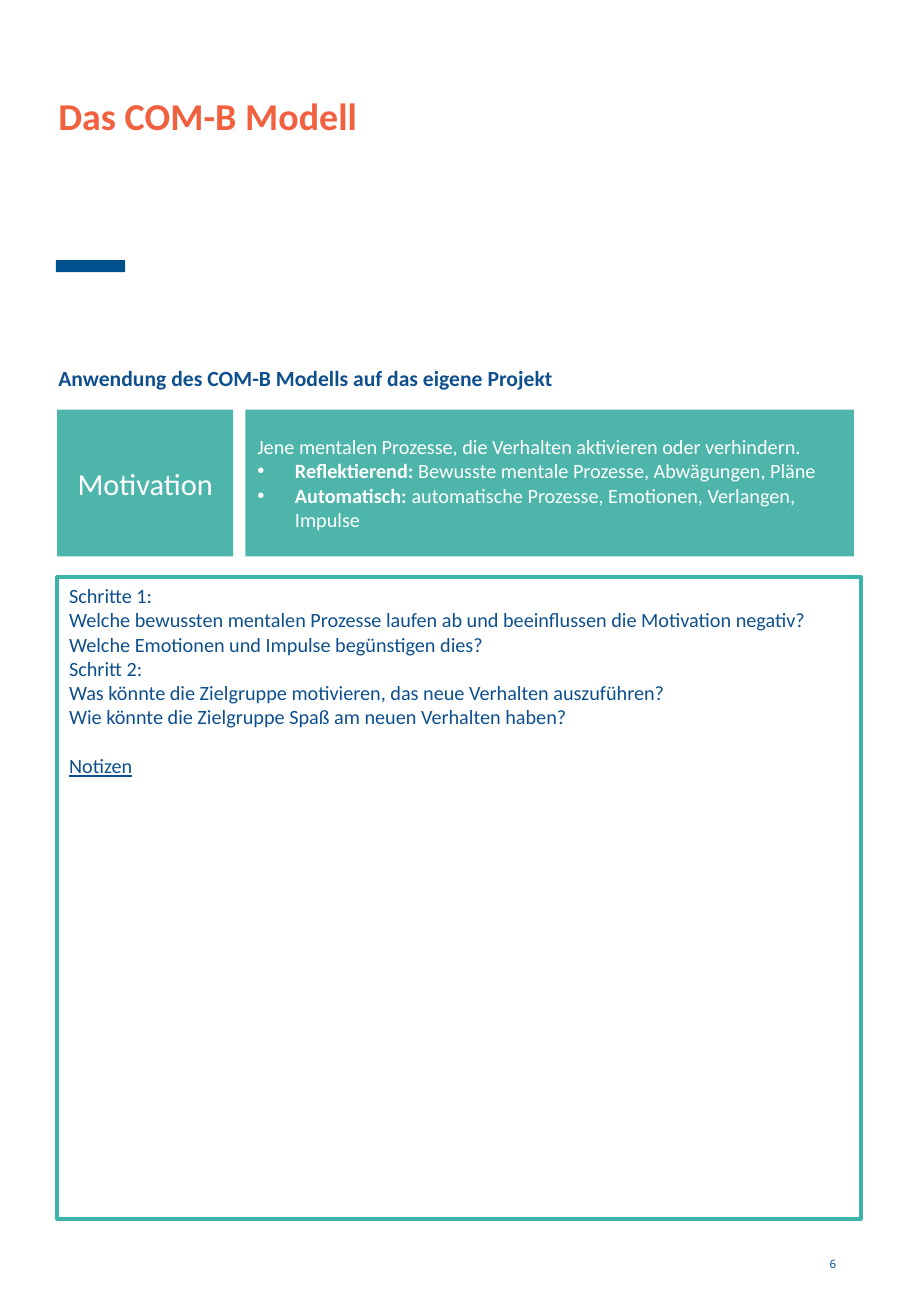
from pptx import Presentation
from pptx.dml.color import RGBColor
from pptx.enum.shapes import MSO_SHAPE
from pptx.enum.text import MSO_ANCHOR, MSO_AUTO_SIZE, PP_ALIGN
from pptx.oxml.ns import qn
from pptx.util import Inches, Pt

RECT = MSO_SHAPE.RECTANGLE
TOP, MIDDLE = MSO_ANCHOR.TOP, MSO_ANCHOR.MIDDLE
LEFT, CENTER = PP_ALIGN.LEFT, PP_ALIGN.CENTER
NO_FIT = MSO_AUTO_SIZE.NONE
DEEP_BLUE, TEXT_BLUE, ORANGE = "01508E", "0E508E", "F1613F"
TEAL, TEAL_LINE, WHITE = "4EB5AA", "3DB4A9", "FFFFFF"


def rgb(color):
    return RGBColor.from_string(color)


def write(shape, paragraphs, size, color, anchor=TOP, align=LEFT, font="Calibri", bold=None):
    """Fill a shape with paragraphs, each a list of (text, bold) runs or a plain string."""
    frame = shape.text_frame
    frame.word_wrap = True
    frame.auto_size = NO_FIT
    frame.vertical_anchor = anchor
    for index, content in enumerate(paragraphs):
        paragraph = frame.paragraphs[0] if index == 0 else frame.add_paragraph()
        paragraph.alignment = align
        paragraph.font.name = font
        paragraph.font.size = Pt(size)
        paragraph.font.color.rgb = rgb(color)
        paragraph.font.bold = bold
        if isinstance(content, str):
            paragraph.add_run().text = content
        else:
            for text, run_bold in content:
                run = paragraph.add_run()
                run.text = text
                run.font.bold = run_bold
    return frame


prs = Presentation()
prs.slide_width, prs.slide_height = Inches(7.5), Inches(10.83)
slide = prs.slides.add_slide(prs.slide_layouts[1])
title, subtitle = slide.placeholders

# Title
title.left, title.top, title.width, title.height = map(Inches, (0.38, 0.66, 6.75, 0.88))
title_frame = write(title, ["Das COM-B Modell"], 22.5, ORANGE, bold=True)
title_frame.margin_top = Inches(0.1)

# Section heading in the body placeholder
subtitle.left, subtitle.top, subtitle.width, subtitle.height = map(Inches, (0.38, 2.91, 6.75, 6.71))
heading = write(subtitle, ["Anwendung des COM-B Modells auf das eigene Projekt"],
                12.8, TEXT_BLUE, bold=True).paragraphs[0]
heading.line_spacing = 1.2
heading.space_before = Pt(0)
heading_props = heading._p.get_or_add_pPr()
heading_props.set("marL", "0")
heading_props.set("indent", "0")
heading_props.insert_element_before(heading_props.makeelement(qn("a:buNone"), {}), "a:defRPr")

# Accent bar, the two teal fields and the framed notes area
boxes = []
for box, fill, line in (
    ((0.46, 2.14, 0.57, 0.1), DEEP_BLUE, None),
    ((0.47, 3.37, 1.45, 1.21), TEAL, None),
    ((2.02, 3.37, 5.01, 1.21), TEAL, None),
    ((0.47, 4.75, 6.62, 5.28), None, TEAL_LINE),
):
    shape = slide.shapes.add_shape(RECT, *map(Inches, box))
    shape.shadow.inherit = False
    if fill:
        shape.fill.solid()
        shape.fill.fore_color.rgb = rgb(fill)
    else:
        shape.fill.background()
    if line:
        shape.line.color.rgb = rgb(line)
        shape.line.width = Pt(2.25)
    else:
        shape.line.fill.background()
    boxes.append(shape)
accent_bar, factor, definition, notes_area = boxes

write(factor, ["Motivation"], 18, WHITE, MIDDLE, CENTER)

# Definition with two bullets
definition_frame = write(definition, [
    "Jene mentalen Prozesse, die Verhalten aktivieren oder verhindern.",
    [("Reflektierend: ", True), ("Bewusste mentale Prozesse, Abwägungen, Pläne", False)],
    [("Automatisch: ", True), ("automatische Prozesse, Emotionen, Verlangen, Impulse", False)],
], 12, WHITE, MIDDLE)
for paragraph in definition_frame.paragraphs[1:]:
    props = paragraph._p.get_or_add_pPr()
    props.set("marL", str(Inches(0.31)))
    props.set("indent", str(-Inches(0.31)))
    for tag, attributes in (("a:buFont", {"typeface": "Arial"}), ("a:buChar", {"char": "•"})):
        props.insert_element_before(props.makeelement(qn(tag), attributes), "a:defRPr")

# Steps and room for notes
steps = write(notes_area, [
    "Schritte 1:",
    "Welche bewussten mentalen Prozesse laufen ab und beeinflussen die Motivation negativ?",
    "Welche Emotionen und Impulse begünstigen dies?",
    "Schritt 2:",
    "Was könnte die Zielgruppe motivieren, das neue Verhalten auszuführen?",
    "Wie könnte die Zielgruppe Spaß am neuen Verhalten haben?",
    "Notizen",
], 12, TEXT_BLUE)
notes_label = steps.paragraphs[-1]
notes_label.space_before = Pt(14.6)
notes_label.font.underline = True

# Page number
page_number = slide.shapes.add_textbox(*map(Inches, (6.76, 10.11, 0.7, 0.58)))
page_frame = write(page_number, ["6"], 6.8, DEEP_BLUE, MIDDLE, font="Noto Sans")
page_frame.margin_left = page_frame.margin_right = Inches(0.07)

prs.save("out.pptx")
